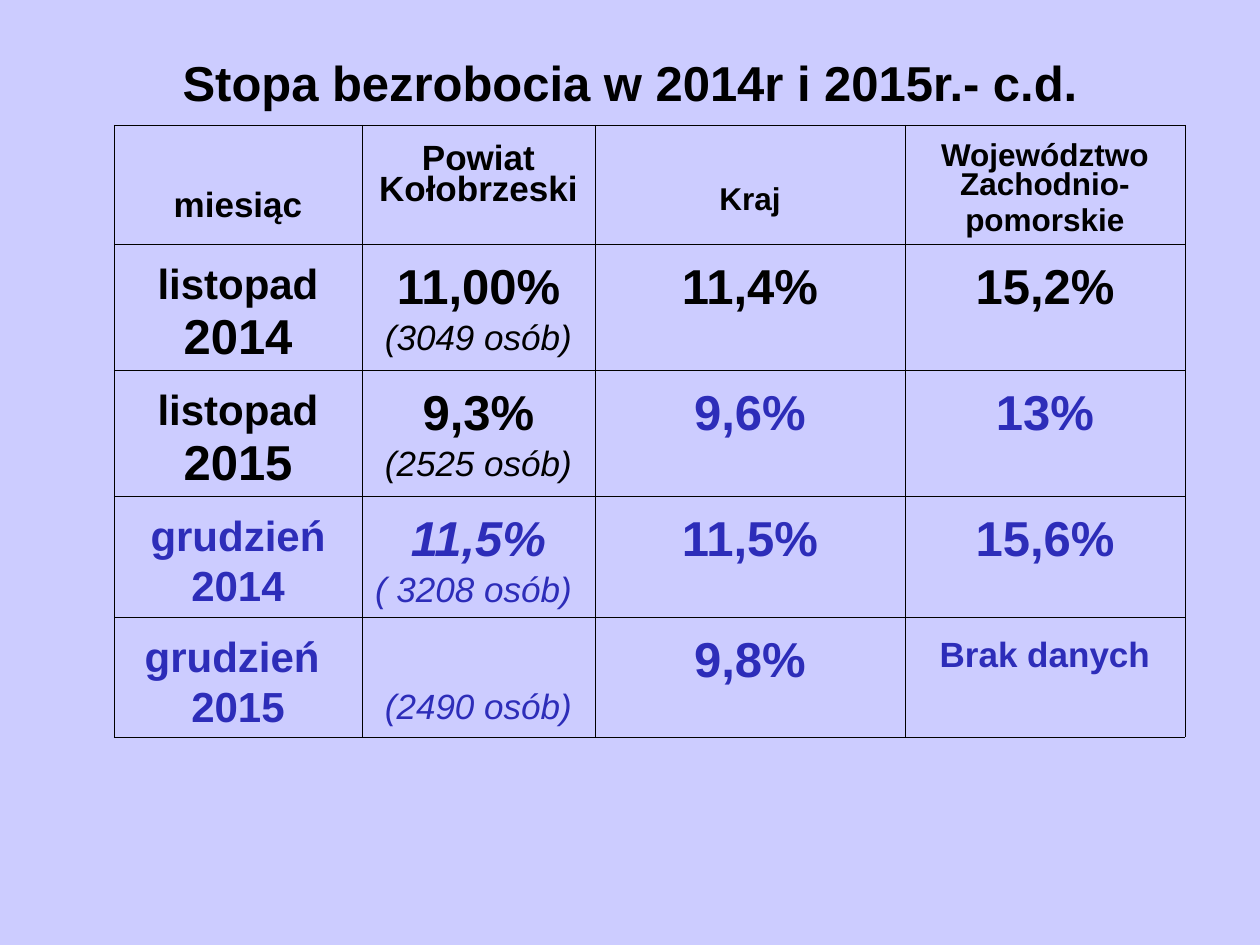
from lxml import etree
from pptx import Presentation, util as u
from pptx.dml.color import RGBColor
from pptx.enum import text
from pptx.oxml import ns

BLACK = RGBColor(0x00, 0x00, 0x00)
BLUE = RGBColor(0x2D, 0x2D, 0xB9)
LAVENDER = RGBColor(0xCC, 0xCC, 0xFF)
FONT = "Arial"

HEADING = "Stopa bezrobocia w 2014r i 2015r.- c.d."
PEOPLE = dict(size=20, bold=False, italic=True)
HEADERS = [
    (67, [("miesiąc", dict(size=20))]),
    (20, [("Powiat Kołobrzeski", dict(size=20, before=5))]),
    (63, [("Kraj", dict(size=18))]),
    (19, [("Województwo Zachodnio-", dict(size=18)), ("pomorskie", dict(size=18))]),
]
MONTHS = [
    [(BLACK, [("listopad", dict(size=24)), ("2014", {})]),
     (BLACK, [("11,00%", {}), ("(3049 osób)", PEOPLE)]),
     (BLACK, [("11,4%", {})]),
     (BLACK, [("15,2%", {})])],
    [(BLACK, [("listopad", dict(size=24)), ("2015", {})]),
     (BLACK, [("9,3%", {}), ("(2525 osób)", PEOPLE)]),
     (BLUE, [("9,6%", {})]),
     (BLUE, [("13%", {})])],
    [(BLUE, [("grudzień", dict(size=24)), ("2014", dict(size=24))]),
     (BLUE, [("11,5%", dict(italic=True)), ("( 3208 osób) ", PEOPLE)]),
     (BLUE, [("11,5%", {})]),
     (BLUE, [("15,6%", {})])],
    [(BLUE, [("grudzień ", dict(size=24)), ("2015", dict(size=24))]),
     (BLUE, [("(2490 osób)", PEOPLE)]),
     (BLUE, [("9,8%", {})]),
     (BLUE, [("Brak danych", dict(size=20))])],
]
COLUMN_WIDTHS = [248, 233, 310, 280]
ROW_HEIGHTS = [119, 126, 126, 121, 120]
TABLE_LEFT, TABLE_TOP = 114, 125
MONTH_INSET, LOWERED_INSET = 25, 77
OUTER_LINE, INNER_LINE = 0.23, 0.11


def px(length):
    return u.Emu(round(length * 914400 / 126))


def write(paragraph, words, size=28, color=BLACK, bold=True, italic=False,
          before=0, spacing=1.0):
    paragraph.alignment = text.PP_ALIGN.CENTER
    paragraph.space_before = u.Pt(before)
    paragraph.line_spacing = spacing
    run = paragraph.add_run()
    run.text = words
    run.font.name = FONT
    run.font.size = u.Pt(size)
    run.font.bold = bold
    run.font.italic = italic
    run.font.color.rgb = color


def draw_borders(cell, row, column):
    edges = {"lnL": column == 0, "lnR": column == len(COLUMN_WIDTHS) - 1,
             "lnT": row == 0, "lnB": row == len(ROW_HEIGHTS) - 1}
    properties = cell._tc.get_or_add_tcPr()
    for side, outer in edges.items():
        line = etree.SubElement(properties, ns.qn("a:" + side))
        line.set("w", str(u.Pt(OUTER_LINE if outer else INNER_LINE)))
        solid = etree.SubElement(line, ns.qn("a:solidFill"))
        etree.SubElement(solid, ns.qn("a:srgbClr")).set("val", str(BLACK))


def fill_cell(cell, inset, lines, color, before):
    cell.margin_left = cell.margin_right = u.Inches(0.1)
    cell.margin_top, cell.margin_bottom = px(inset), u.Inches(0.05)
    cell.vertical_anchor = text.MSO_ANCHOR.TOP
    for index, (words, style) in enumerate(lines):
        frame = cell.text_frame
        paragraph = frame.add_paragraph() if index else frame.paragraphs[0]
        write(paragraph, words, **{"color": color, "before": before,
                                   "spacing": 0.81, **style})


def main():
    deck = Presentation()
    deck.slide_width, deck.slide_height = px(1260), px(945)
    slide = deck.slides.add_slide(deck.slide_layouts[5])
    slide.background.fill.solid()
    slide.background.fill.fore_color.rgb = LAVENDER

    heading = slide.shapes.title
    heading.left, heading.top, heading.width, heading.height = map(px, (63, 38, 1134, 87))
    heading.text_frame.auto_size = text.MSO_AUTO_SIZE.NONE
    heading.text_frame.vertical_anchor = text.MSO_ANCHOR.MIDDLE
    write(heading.text_frame.paragraphs[0], HEADING)

    rates = slide.shapes.add_table(
        len(ROW_HEIGHTS), len(COLUMN_WIDTHS), px(TABLE_LEFT), px(TABLE_TOP),
        px(sum(COLUMN_WIDTHS)), px(sum(ROW_HEIGHTS))).table
    rates.first_row = rates.horz_banding = False
    for column, width in zip(rates.columns, COLUMN_WIDTHS):
        column.width = px(width)
    for row, height in zip(rates.rows, ROW_HEIGHTS):
        row.height = px(height)

    for column, (inset, lines) in enumerate(HEADERS):
        fill_cell(rates.cell(0, column), inset, lines, BLACK, 4.5)
    for row, month in enumerate(MONTHS, 1):
        for column, (color, lines) in enumerate(month):
            lowered = column == 1 and len(lines) == 1
            inset = LOWERED_INSET if lowered else MONTH_INSET
            fill_cell(rates.cell(row, column), inset, lines, color, 7)
    for row in range(len(ROW_HEIGHTS)):
        for column in range(len(COLUMN_WIDTHS)):
            cell = rates.cell(row, column)
            draw_borders(cell, row, column)
            cell.fill.background()

    deck.save("out.pptx")


if __name__ == "__main__":
    main()
